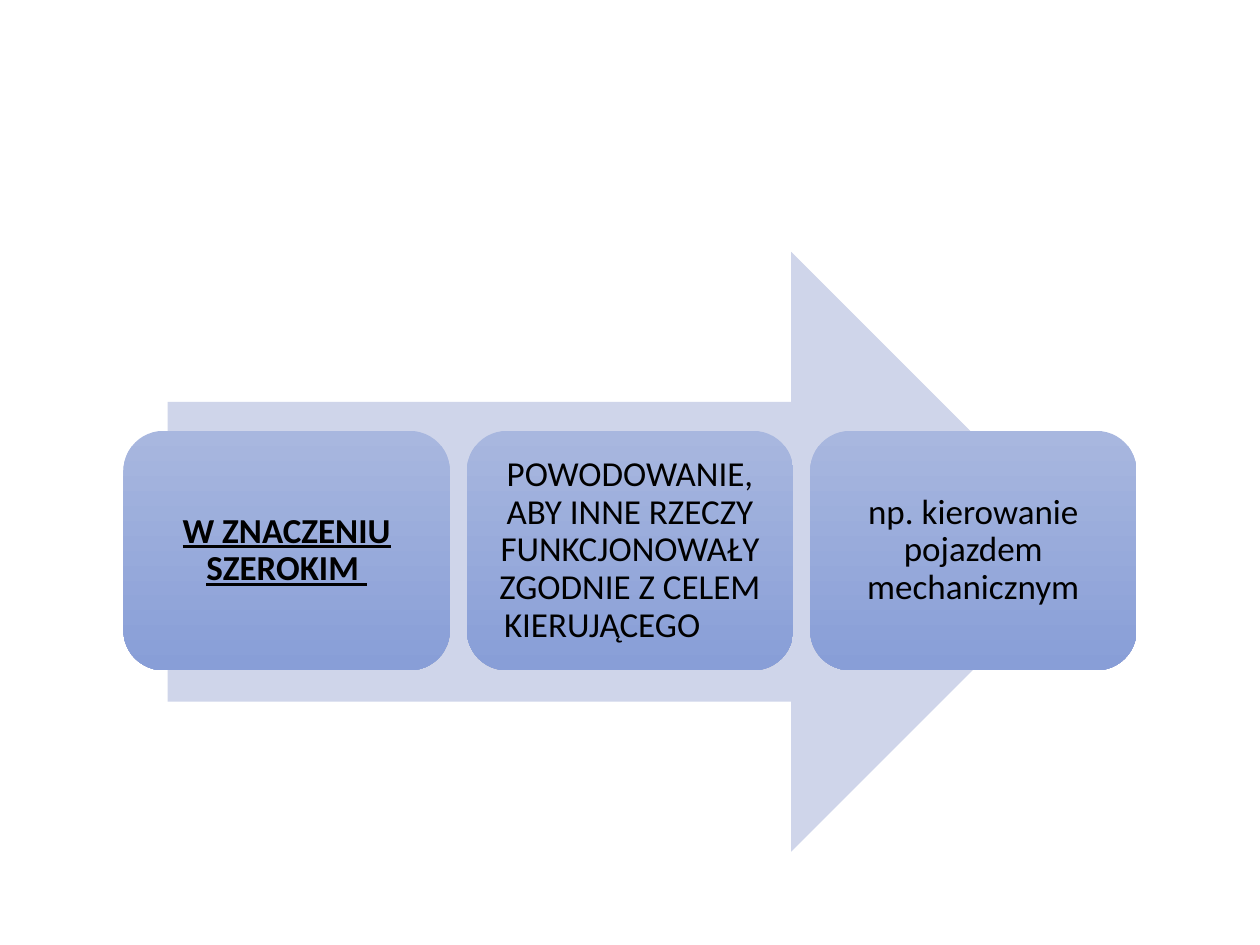
from dataclasses import dataclass

from pptx import Presentation
from pptx.dml.color import RGBColor
from pptx.enum import shapes, text
from pptx.util import Inches, Pt


@dataclass(frozen=True)
class Theme:
    arrow: RGBColor = RGBColor.from_string("CFD5EA")
    step_top: RGBColor = RGBColor.from_string("A8B7DF")
    step_bottom: RGBColor = RGBColor.from_string("889ED7")
    ink: RGBColor = RGBColor.from_string("000000")
    font: str = "Calibri"
    size: Pt = Pt(20)


theme = Theme()

# Wording and whether the step is emphasised; the tab sets the last line to the left
STEPS = [
    ("W ZNACZENIU SZEROKIM ", True),
    ("POWODOWANIE, ABY INNE RZECZY FUNKCJONOWAŁY ZGODNIE Z CELEM KIERUJĄCEGO\t", False),
    ("np. kierowanie pojazdem mechanicznym", False),
]
FIRST_LEFT, LAST_LEFT = 0.98, 6.43
pitch = (LAST_LEFT - FIRST_LEFT) / (len(STEPS) - 1)

prs = Presentation()
prs.slide_width, prs.slide_height = Inches(10), Inches(7.5)
slide = prs.slides.add_slide(prs.slide_layouts[6])


def add_plain(kind, left, top, width, height):
    """Add a preset shape without shadow or outline."""
    shape = slide.shapes.add_shape(
        kind, Inches(left), Inches(top), Inches(width), Inches(height))
    shape.shadow.inherit = False
    shape.line.fill.background()
    return shape


arrow = add_plain(shapes.MSO_SHAPE.RIGHT_ARROW, 1.33, 2, 7.33, 4.76)
arrow.fill.solid()
arrow.fill.fore_color.rgb = theme.arrow

for i, (wording, emphasised) in enumerate(STEPS):
    step = add_plain(shapes.MSO_SHAPE.ROUNDED_RECTANGLE,
                     FIRST_LEFT + i * pitch, 3.42, 2.59, 1.9)
    step.fill.gradient()
    step.fill.gradient_angle = 270
    for stop, color, position in zip(step.fill.gradient_stops,
                                     (theme.step_top, theme.step_bottom), (0, 1)):
        stop.color.rgb = color
        stop.position = position

    frame = step.text_frame
    frame.word_wrap = True
    frame.vertical_anchor = text.MSO_ANCHOR.MIDDLE
    # The rounded corners add 0.09 inch to each inset
    frame.margin_left = frame.margin_right = Inches(0.08)
    frame.margin_top = frame.margin_bottom = Inches(0.08)
    frame.text = wording
    paragraph = frame.paragraphs[0]
    paragraph.alignment = text.PP_ALIGN.CENTER
    paragraph.line_spacing = 0.9
    for run in paragraph.runs:
        run.font.name = theme.font
        run.font.size = theme.size
        run.font.color.rgb = theme.ink
        run.font.bold = run.font.underline = emphasised

prs.save("out.pptx")
